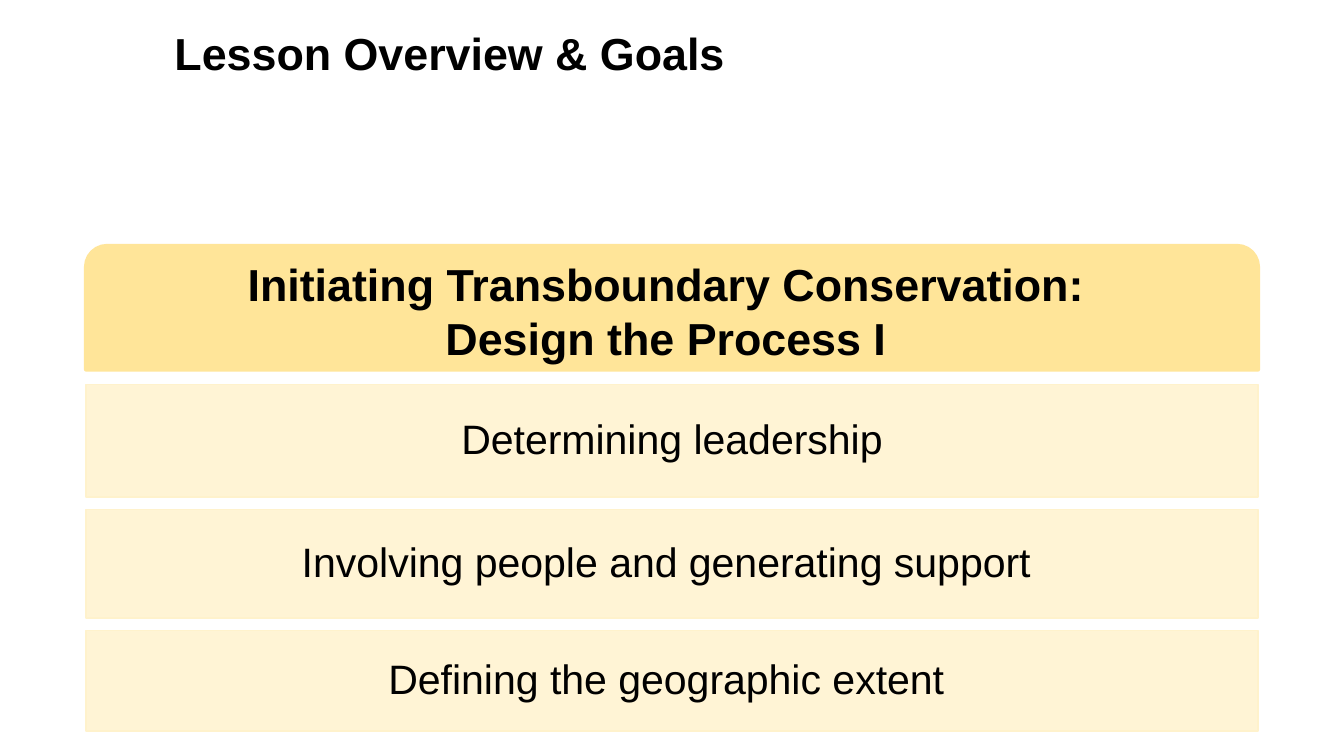
from dataclasses import dataclass

from lxml import etree
from pptx import Presentation, util as u
from pptx.dml.color import RGBColor
from pptx.enum import shapes, text
from pptx.oxml.ns import qn


@dataclass(frozen=True)
class Theme:
    font: str = "Arial"
    ink: str = "000000"
    paper: str = "FFFFFF"
    header: str = "FFE599"
    row: str = "FFF2CC"
    heading_size: int = 24
    row_size: int = 22


@dataclass(frozen=True)
class Panel:
    """A filled box; lengths are in grid cells."""
    left: int
    top: int
    width: int
    height: int
    lines: tuple[str, ...]
    fill: str
    size: int
    opacity: int = 100
    outline: float = 0
    bold: bool = False
    kind: int = shapes.MSO_SHAPE.RECTANGLE
    corners: tuple[float, ...] = ()
    align: int = text.PP_ALIGN.CENTER
    anchor: int = text.MSO_ANCHOR.MIDDLE
    pad: int = 5
    spacing: float = 1.0


THEME = Theme()
COLUMNS = 1000
PAGE_WIDTH = u.Inches(10)
PAGE_HEIGHT = PAGE_WIDTH * 9 // 16
CELL = PAGE_WIDTH // COLUMNS
LEFT, WIDTH = 64, 872
SIDE_PAD = 10


def draw_panel(page, panel: Panel) -> None:
    bounds = (panel.left, panel.top, panel.width, panel.height)
    box = page.shapes.add_shape(panel.kind, *(CELL * n for n in bounds))
    box.shadow.inherit = False
    for index, value in enumerate(panel.corners):
        box.adjustments[index] = value

    # Fill and outline
    box.fill.solid()
    box.fill.fore_color.rgb = RGBColor.from_string(panel.fill)
    if panel.opacity < 100:
        color = box.fill._xPr.find(qn("a:solidFill"))[0]
        etree.SubElement(color, qn("a:alpha"), val=str(panel.opacity * 1000))
    if panel.outline:
        box.line.color.rgb = RGBColor.from_string(panel.fill)
        box.line.width = u.Pt(panel.outline)
    else:
        box.line.fill.background()

    # Text
    frame = box.text_frame
    frame.word_wrap = True
    frame.vertical_anchor = panel.anchor
    frame.margin_left = frame.margin_right = CELL * SIDE_PAD
    frame.margin_top = frame.margin_bottom = CELL * panel.pad
    for index, line in enumerate(panel.lines):
        para = frame.add_paragraph() if index else frame.paragraphs[0]
        para.alignment = panel.align
        para.line_spacing = panel.spacing
        span = para.add_run()
        span.text = line
        span.font.name = THEME.font
        span.font.size = u.Pt(panel.size)
        span.font.bold = panel.bold
        span.font.color.rgb = RGBColor.from_string(THEME.ink)


def draw_goals(page, top: int, gap: int, goals: tuple[tuple[str, int], ...]) -> None:
    """Stack the goal rows downwards with equal gaps."""
    for goal, height in goals:
        draw_panel(page, Panel(LEFT, top, WIDTH, height, (goal,), THEME.row,
                               THEME.row_size, opacity=81, outline=0.75,
                               spacing=0.9))
        top += height + gap


def main() -> None:
    deck = Presentation()
    deck.slide_width, deck.slide_height = PAGE_WIDTH, PAGE_HEIGHT
    page = deck.slides.add_slide(deck.slide_layouts[6])

    # Lesson header
    draw_panel(page, Panel(
        LEFT, 183, WIDTH, 92,
        ("Initiating Transboundary Conservation: ", "Design the Process I "),
        THEME.header, THEME.heading_size, outline=2.25, bold=True,
        kind=shapes.MSO_SHAPE.ROUND_2_SAME_RECTANGLE, corners=(0.17, 0), pad=10))

    # Goals
    draw_goals(page, top=286, gap=9, goals=(
        ("Determining leadership", 84),
        ("Involving people and generating support ", 81),
        ("Defining the geographic extent ", 75)))

    # Title
    draw_panel(page, Panel(
        120, 14, 880, 50, ("Lesson Overview & Goals",), THEME.paper,
        THEME.heading_size, opacity=55, bold=True, align=text.PP_ALIGN.LEFT,
        anchor=text.MSO_ANCHOR.TOP))

    deck.save("out.pptx")


if __name__ == "__main__":
    main()
